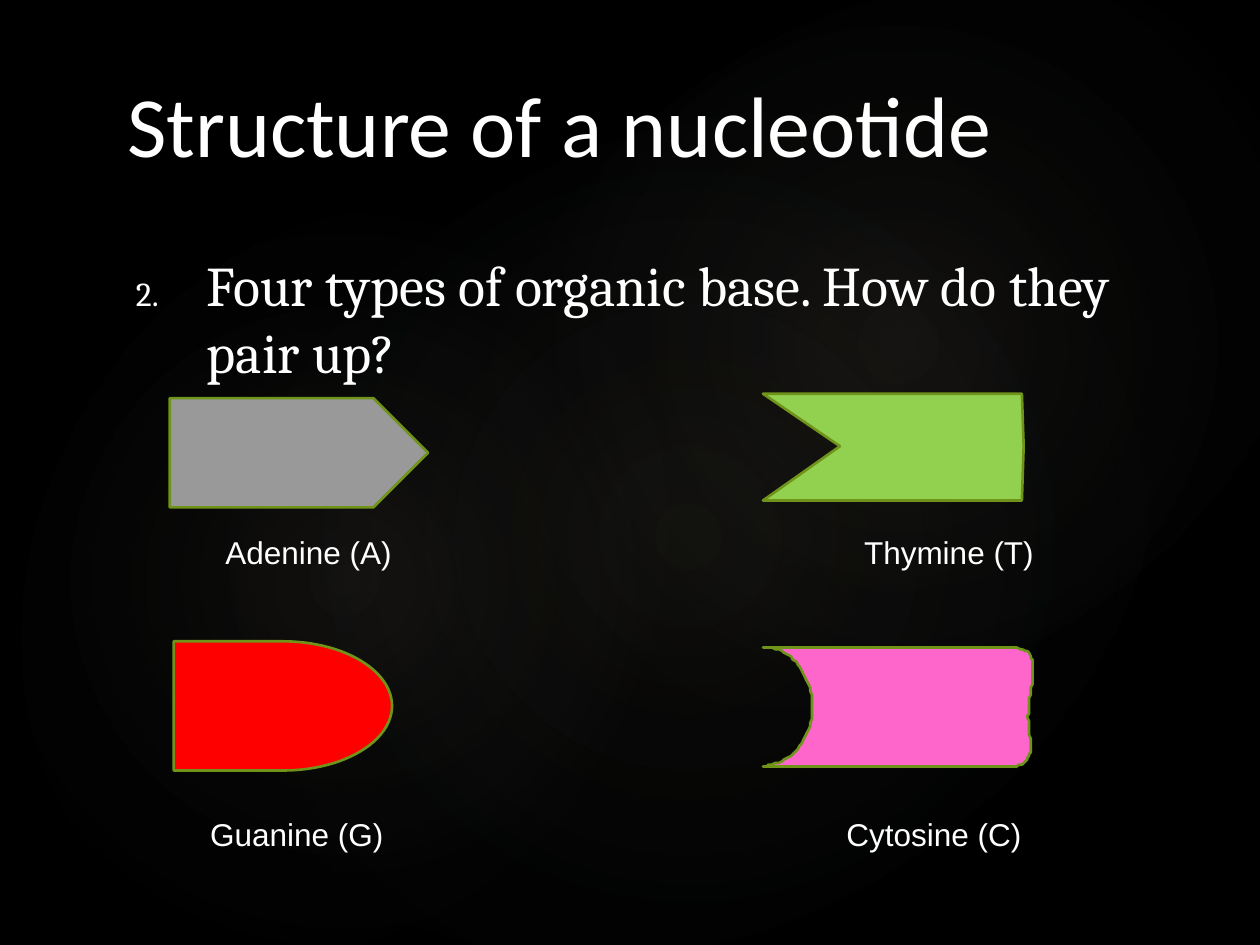
"""Build the slide on the four organic bases of a nucleotide."""
from lxml import etree
from pptx import Presentation
from pptx import util as u
from pptx.dml.color import RGBColor
from pptx.enum import shapes, text
from pptx.oxml import parse_xml
from pptx.oxml.ns import nsdecls, qn

BLACK = RGBColor(0x00, 0x00, 0x00)
WHITE = RGBColor(0xFF, 0xFF, 0xFF)
OLIVE = RGBColor(0x70, 0x93, 0x1A)
GRAY = RGBColor(0x99, 0x99, 0x99)
RED = RGBColor(0xFF, 0x00, 0x00)
PINK = RGBColor(0xFF, 0x66, 0xCC)
GREEN = RGBColor(0x92, 0xD0, 0x50)
GLOW_INNER = RGBColor(0xCB, 0xBB, 0xA1)
GLOW_OUTER = RGBColor(0x5B, 0x69, 0x73)


def write_text(shape, words, font, size, wrap=True, anchor=text.MSO_ANCHOR.TOP):
    frame = shape.text_frame
    frame.word_wrap = wrap
    frame.vertical_anchor = anchor
    paragraph = frame.paragraphs[0]
    paragraph.alignment = text.PP_ALIGN.LEFT
    run = paragraph.add_run()
    run.text = words
    run.font.name = font
    run.font.size = u.Pt(size)
    run.font.color.rgb = WHITE
    return paragraph


def curve_points(start, first, second, end, steps=24):
    points = []
    for step in range(1, steps + 1):
        t = step / steps
        weights = ((1 - t) ** 3, 3 * t * (1 - t) ** 2, 3 * t * t * (1 - t), t ** 3)
        points.append(tuple(
            sum(weight * value for weight, value in zip(weights, values))
            for values in zip(start, first, second, end)
        ))
    return points


presentation = Presentation()
presentation.slide_width, presentation.slide_height = u.Pt(720), u.Pt(540)
slide = presentation.slides.add_slide(presentation.slide_layouts[5])
slide.background.fill.solid()
slide.background.fill.fore_color.rgb = BLACK

title = slide.shapes.title
title.left, title.top, title.width, title.height = map(u.Pt, (65.5, 31.7, 594, 72))
write_text(title, "Structure of a nucleotide", "Calibri", 49, anchor=text.MSO_ANCHOR.BOTTOM)

glows = [
    ((108, 82, 570, 449), 328.7, 7),
    ((-21.6, 155, 436, 353), 294.3, 8),
    ((258, 9.4, 510.5, 374.4), 328.7, 8),
]
for index, (box, rotation, opacity) in enumerate(glows):
    glow = slide.shapes.add_shape(shapes.MSO_SHAPE.OVAL, *map(u.Pt, box))
    glow.rotation = rotation
    glow.shadow.inherit = False
    glow.line.fill.background()
    geometry = glow.element.spPr.find(qn("a:prstGeom"))
    geometry.addnext(parse_xml(
        f'<a:gradFill {nsdecls("a")} rotWithShape="1"><a:gsLst>'
        f'<a:gs pos="0"><a:srgbClr val="{GLOW_INNER}"><a:alpha val="{opacity * 1000}"/></a:srgbClr></a:gs>'
        f'<a:gs pos="58000"><a:srgbClr val="{GLOW_OUTER}"><a:alpha val="0"/></a:srgbClr></a:gs>'
        '</a:gsLst><a:path path="circle"><a:fillToRect l="50000" t="50000" r="50000" b="50000"/>'
        '</a:path></a:gradFill>'
    ))
    slide.shapes._spTree.insert(2 + index, glow.element)

question = slide.shapes.add_textbox(*map(u.Pt, (70.6, 139.7, 595.4, 363)))
paragraph = write_text(question, "Four types of organic base. How do they pair up?", "Cambria", 32)
paragraph.space_before = u.Pt(6.4)
properties = paragraph._p.get_or_add_pPr()
properties.set("marL", str(u.Pt(40.5)))
properties.set("indent", str(u.Pt(-40.5)))
etree.SubElement(properties, qn("a:buSzPct"), val="60000")
etree.SubElement(properties, qn("a:buFont"), typeface="Cambria")
etree.SubElement(properties, qn("a:buAutoNum"), type="arabicPeriod", startAt="2")

adenine = slide.shapes.add_shape(
    shapes.MSO_SHAPE.PENTAGON, *map(u.Pt, (97, 227.5, 147.6, 62.4)))
guanine = slide.shapes.add_shape(
    shapes.MSO_SHAPE.FLOWCHART_DELAY, *map(u.Pt, (99.2, 366.5, 124.8, 73.8)))

thymine_points = [(584, 225.4), (584.8, 255), (584, 285.8), (435.6, 285.8), (480.5, 255.4)]
cytosine_points = [
    (435.6, 437.6),
    *curve_points((435.6, 437.6), (451.4, 437.6), (464.4, 422.6), (464.4, 403.8)),
    *curve_points((464.4, 403.8), (464.4, 385), (451.4, 369.6), (435.6, 369.6)),
    (581, 370.4),
    *curve_points((581, 370.4), (597, 370.4), (587.5, 396), (587.5, 407.5)),
    *curve_points((587.5, 407.5), (586.8, 418.3), (594.7, 437.6), (578.9, 437.6)),
]
outlines = []
for start, points in [((435.6, 225.4), thymine_points), ((578.9, 437.6), cytosine_points)]:
    builder = slide.shapes.build_freeform(*start, scale=u.Pt(1))
    builder.add_line_segments(points, close=True)
    outlines.append(builder.convert_to_shape())
thymine, cytosine = outlines

for base, color in [(adenine, GRAY), (thymine, GREEN), (guanine, RED), (cytosine, PINK)]:
    base.shadow.inherit = False
    base.fill.solid()
    base.fill.fore_color.rgb = color
    base.line.color.rgb = OLIVE
    base.line.width = u.Pt(1.5)

labels = [
    ("Adenine (A)", 121.7, 301, 110),
    ("Thymine (T)", 486.7, 301, 112.3),
    ("Guanine (G)", 113, 462.2, 114.5),
    ("Cytosine (C)", 476.6, 462.2, 115.2),
]
for words, left, top, width in labels:
    label = slide.shapes.add_textbox(*map(u.Pt, (left, top, width, 28.8)))
    write_text(label, words, "Arial", 18, wrap=False)
    label.text_frame.auto_size = text.MSO_AUTO_SIZE.SHAPE_TO_FIT_TEXT

presentation.save("out.pptx")
